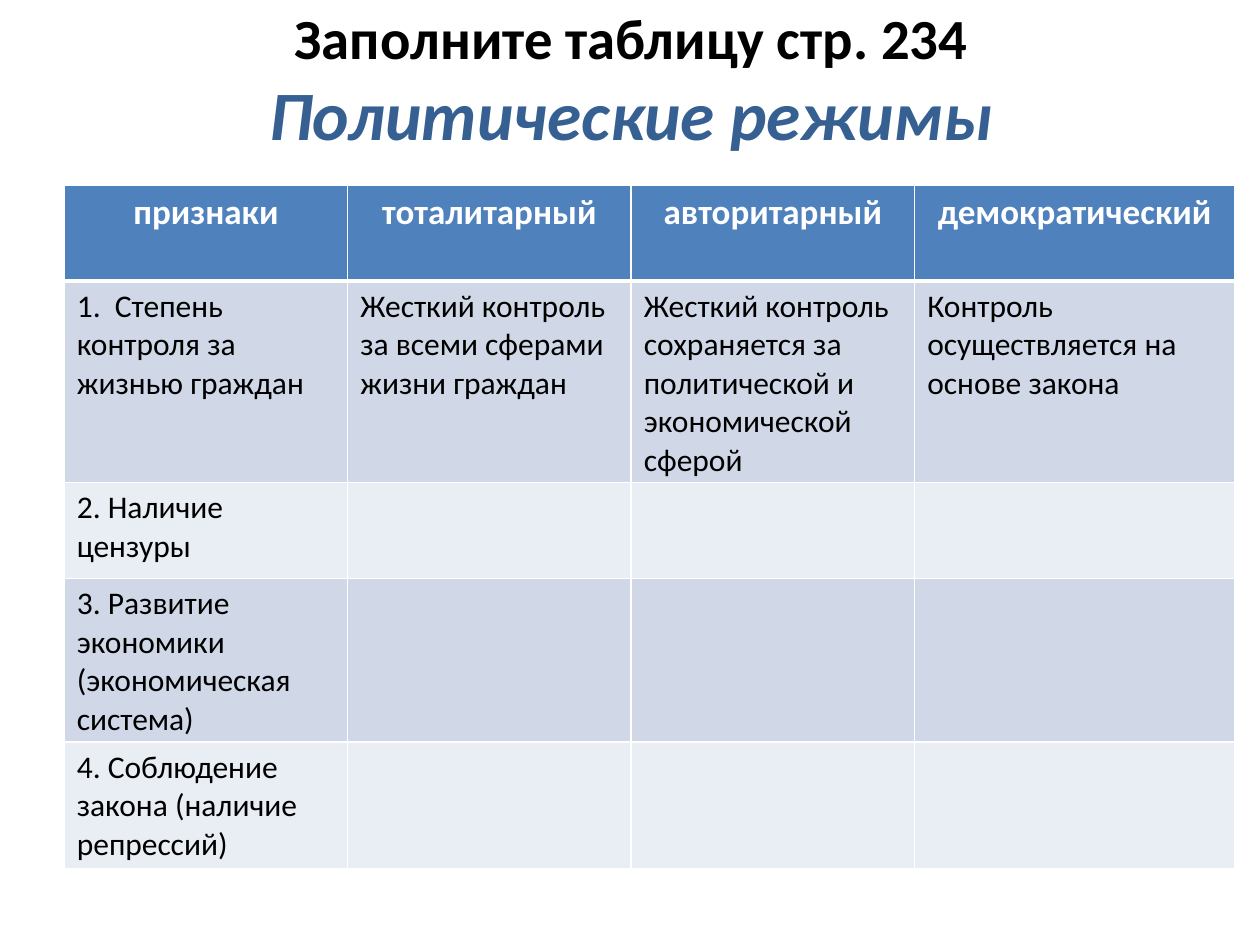
from pptx import Presentation
from pptx.dml.color import RGBColor
from pptx.enum.text import MSO_ANCHOR, PP_ALIGN
from pptx.oxml.ns import qn
from pptx.util import Inches, Pt
from lxml.etree import SubElement

FONT = "Calibri"
BLACK = RGBColor(0x00, 0x00, 0x00)
WHITE = RGBColor(0xFF, 0xFF, 0xFF)
NAVY = RGBColor(0x37, 0x60, 0x92)
BLUE = RGBColor(0x4F, 0x81, 0xBD)
BANDS = (RGBColor(0xE9, 0xED, 0xF4), RGBColor(0xD0, 0xD8, 0xE8))

COLUMN_WIDTHS = (2.25, 2.25, 2.25, 2.54)
ROW_HEIGHTS = (0.76, 1.48, 0.76, 0.76, 0.76)
REGIMES = (
    ("признаки", "тоталитарный", "авторитарный", "демократический"),
    (
        "1.  Степень контроля за жизнью граждан",
        "Жесткий контроль за всеми сферами жизни граждан",
        "Жесткий контроль сохраняется за политической и экономической сферой",
        "Контроль осуществляется на основе закона",
    ),
    ("2. Наличие цензуры", "", "", ""),
    ("3. Развитие экономики (экономическая система)", "", "", ""),
    ("4. Соблюдение закона (наличие репрессий)", "", "", ""),
)


def format_font(font, size, color, bold=False, italic=False):
    """Apply the typeface, size, colour and style to a font."""
    font.name = FONT
    font.size = Pt(size)
    font.color.rgb = color
    font.bold = bold
    font.italic = italic


def add_span(para, text, **style):
    """Append a formatted run to a paragraph."""
    span = para.add_run()
    span.text = text
    format_font(span.font, **style)


def add_title(page):
    """Add the two-line centred heading."""
    box = page.shapes.add_textbox(Inches(0.51), 0, Inches(9), Inches(1.25))
    frame = box.text_frame
    frame.word_wrap = True
    frame.vertical_anchor = MSO_ANCHOR.MIDDLE
    para = frame.paragraphs[0]
    para.alignment = PP_ALIGN.CENTER
    add_span(para, "Заполните таблицу стр. 234", size=32.4, color=BLACK, bold=True)
    para.add_line_break()
    add_span(para, "Политические режимы", size=39.6, color=NAVY, bold=True, italic=True)


def set_borders(cell, **widths):
    """Draw white cell borders with the given widths in points."""
    properties = cell._tc.get_or_add_tcPr()
    for index, (side, width) in enumerate(widths.items()):
        line = properties.makeelement(qn(f"a:ln{side}"), {"w": str(Pt(width))})
        fill = SubElement(line, qn("a:solidFill"))
        SubElement(fill, qn("a:srgbClr"), val=str(WHITE))
        properties.insert(index, line)


def fill_cell(cell, text, fill, align, **style):
    """Set the fill and formatted text of a table cell."""
    cell.fill.solid()
    cell.fill.fore_color.rgb = fill
    para = cell.text_frame.paragraphs[0]
    para.alignment = align
    if text:
        add_span(para, text, **style)
    else:
        format_font(para.font, **style)


def add_regime_table(page):
    """Add the table that compares political regimes."""
    frame = page.shapes.add_table(
        len(REGIMES), len(COLUMN_WIDTHS),
        Inches(0.51), Inches(1.47), Inches(9.29), Inches(5.42),
    )
    table = frame.table
    for column, width in zip(table.columns, COLUMN_WIDTHS):
        column.width = Inches(width)
    for row, height in zip(table.rows, ROW_HEIGHTS):
        row.height = Inches(height)
    frame.height = Inches(5.42)
    for row_index, texts in enumerate(REGIMES):
        for column_index, text in enumerate(texts):
            cell = table.cell(row_index, column_index)
            if row_index == 0:
                fill_cell(cell, text, BLUE, PP_ALIGN.CENTER, size=20, color=WHITE, bold=True)
            else:
                fill_cell(cell, text, BANDS[row_index % 2], PP_ALIGN.LEFT, size=18, color=BLACK)
            top = 3 if row_index == 1 else 1
            bottom = 3 if row_index == 0 else 1
            set_borders(cell, L=1, R=1, T=top, B=bottom)


def main():
    """Build the slide and save the deck."""
    deck = Presentation()
    deck.slide_width = Inches(10)
    deck.slide_height = Inches(7.5)
    page = deck.slides.add_slide(deck.slide_layouts[6])
    add_title(page)
    add_regime_table(page)
    deck.save("out.pptx")


if __name__ == "__main__":
    main()
